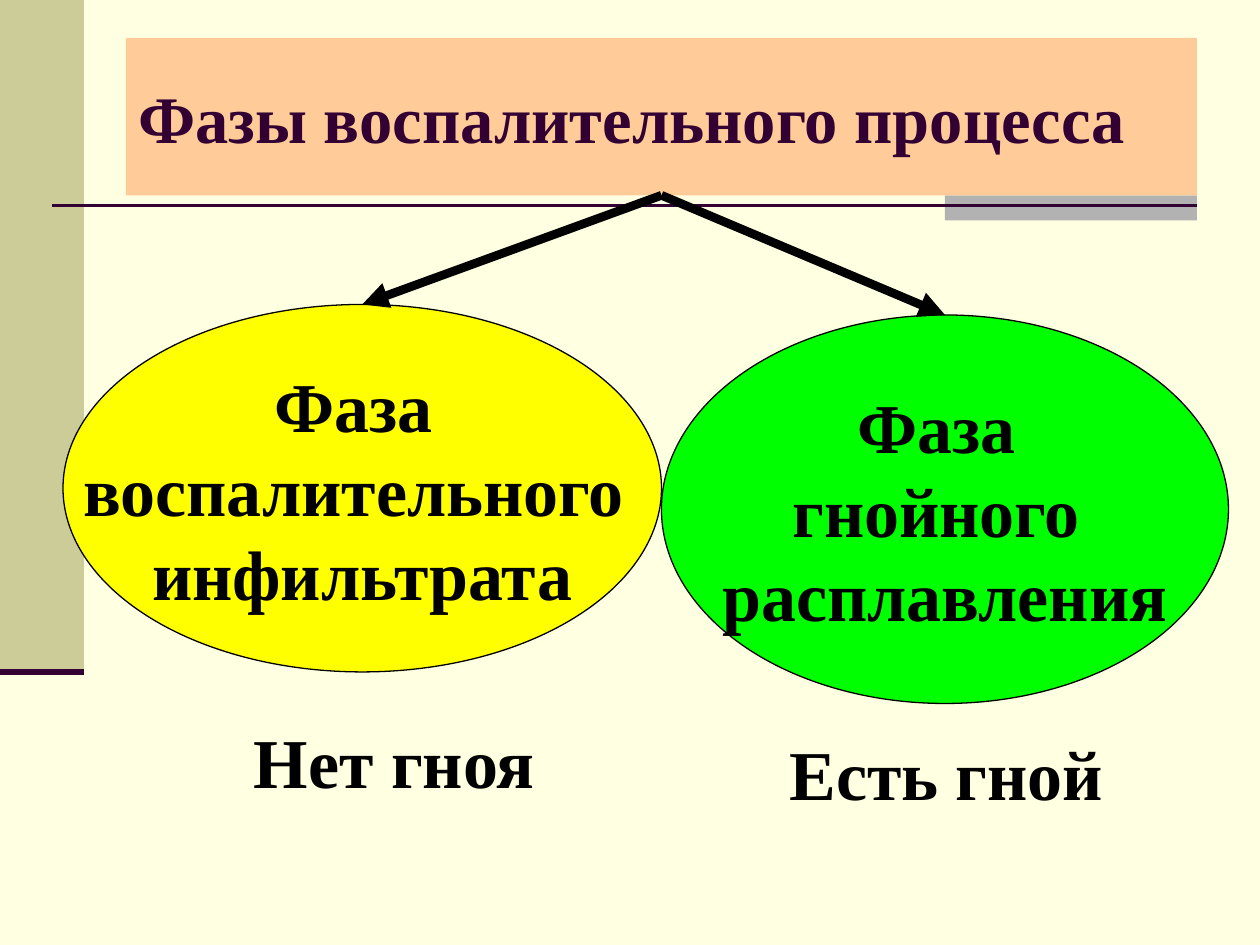
from dataclasses import dataclass

from lxml.etree import SubElement
from pptx import Presentation
from pptx.dml.color import RGBColor
from pptx.enum.shapes import MSO_CONNECTOR, MSO_SHAPE
from pptx.enum.text import MSO_ANCHOR, MSO_AUTO_SIZE, PP_ALIGN
from pptx.oxml.ns import qn
from pptx.util import Pt

EMU_PER_PX = 7620


def px(length):
    return length * EMU_PER_PX


@dataclass(frozen=True)
class Theme:
    font: str = "Times New Roman"
    background: str = "FFFFE1"
    band: str = "CCCC99"
    accent: str = "B2B2B2"
    plum: str = "330033"
    title_fill: str = "FFCC99"
    infiltrate: str = "FFFF00"
    purulent: str = "00FF00"
    ink: str = "000000"
    title_size: int = 38
    body_size: int = 40


class SlideBuilder:
    def __init__(self, presentation, theme):
        self.theme = theme
        self.slide = presentation.slides.add_slide(presentation.slide_layouts[6])
        background = self.slide.background.fill
        background.solid()
        background.fore_color.rgb = RGBColor.from_string(theme.background)

    def shape(self, kind, box, fill, outline=None):
        shape = self.slide.shapes.add_shape(kind, *map(px, box))
        shape.shadow.inherit = False
        shape.fill.solid()
        shape.fill.fore_color.rgb = RGBColor.from_string(fill)
        if outline:
            shape.line.color.rgb = RGBColor.from_string(outline)
            shape.line.width = Pt(0.75)
        else:
            shape.line.fill.background()
        return shape

    def add_lines(self, shape, lines, size, color, alignment, frame_format):
        frame = shape.text_frame
        for name, value in frame_format.items():
            setattr(frame, name, value)
        font_format = {"name": self.theme.font, "size": Pt(size), "bold": True}
        for index, line in enumerate(lines):
            paragraph = frame.add_paragraph() if index else frame.paragraphs[0]
            paragraph.alignment = alignment
            run = paragraph.add_run()
            run.text = line
            for name, value in font_format.items():
                setattr(run.font, name, value)
            run.font.color.rgb = RGBColor.from_string(color)

    def title(self, box, text):
        shape = self.shape(MSO_SHAPE.RECTANGLE, box, self.theme.title_fill)
        self.add_lines(shape, [text], self.theme.title_size, self.theme.plum, PP_ALIGN.LEFT,
                       {"word_wrap": True, "vertical_anchor": MSO_ANCHOR.MIDDLE})

    def phase(self, box, fill, lines):
        shape = self.shape(MSO_SHAPE.OVAL, box, fill, self.theme.ink)
        self.add_lines(shape, lines, self.theme.body_size, self.theme.ink, PP_ALIGN.CENTER,
                       {"word_wrap": False, "vertical_anchor": MSO_ANCHOR.MIDDLE})

    def caption(self, box, text):
        shape = self.slide.shapes.add_textbox(*map(px, box))
        self.add_lines(shape, [text], self.theme.body_size, self.theme.ink, PP_ALIGN.LEFT,
                       {"word_wrap": False, "auto_size": MSO_AUTO_SIZE.SHAPE_TO_FIT_TEXT})

    def line(self, start, end, color, width, arrow=False):
        connector = self.slide.shapes.add_connector(
            MSO_CONNECTOR.STRAIGHT, *map(px, start + end))
        connector.line.color.rgb = RGBColor.from_string(color)
        connector.line.width = Pt(width)
        properties = connector._element.spPr
        if arrow:
            SubElement(properties.find(qn("a:ln")), qn("a:tailEnd"), type="triangle")
        SubElement(properties, qn("a:effectLst"))


def main():
    presentation = Presentation()
    presentation.slide_width = px(1200)
    presentation.slide_height = px(900)
    theme = Theme()
    builder = SlideBuilder(presentation, theme)

    builder.shape(MSO_SHAPE.RECTANGLE, (0, 0, 80, 640), theme.band)
    builder.shape(MSO_SHAPE.RECTANGLE, (900, 186, 240, 24), theme.accent)
    builder.line((50, 196), (1140, 196), theme.plum, 1.5)
    builder.line((0, 640), (80, 640), theme.plum, 3.5)
    builder.title((120, 36, 1020, 150), "Фазы воспалительного процесса")

    phases = [
        ((60, 290, 570, 350), theme.infiltrate,
         ["Фаза ", "воспалительного ", "инфильтрата"]),
        ((630, 300, 540, 370), theme.purulent,
         ["Фаза ", "гнойного ", "расплавления"]),
    ]
    for box, fill, lines in phases:
        builder.phase(box, fill, lines)
    for (left, top, width, _), _, _ in phases:
        builder.line((630, 186), (left + width // 2, top), theme.ink, 5, arrow=True)

    builder.caption((230, 678, 293, 92), "Нет гноя")
    builder.caption((740, 690, 323, 92), "Есть гной")
    presentation.save("out.pptx")


if __name__ == "__main__":
    main()
